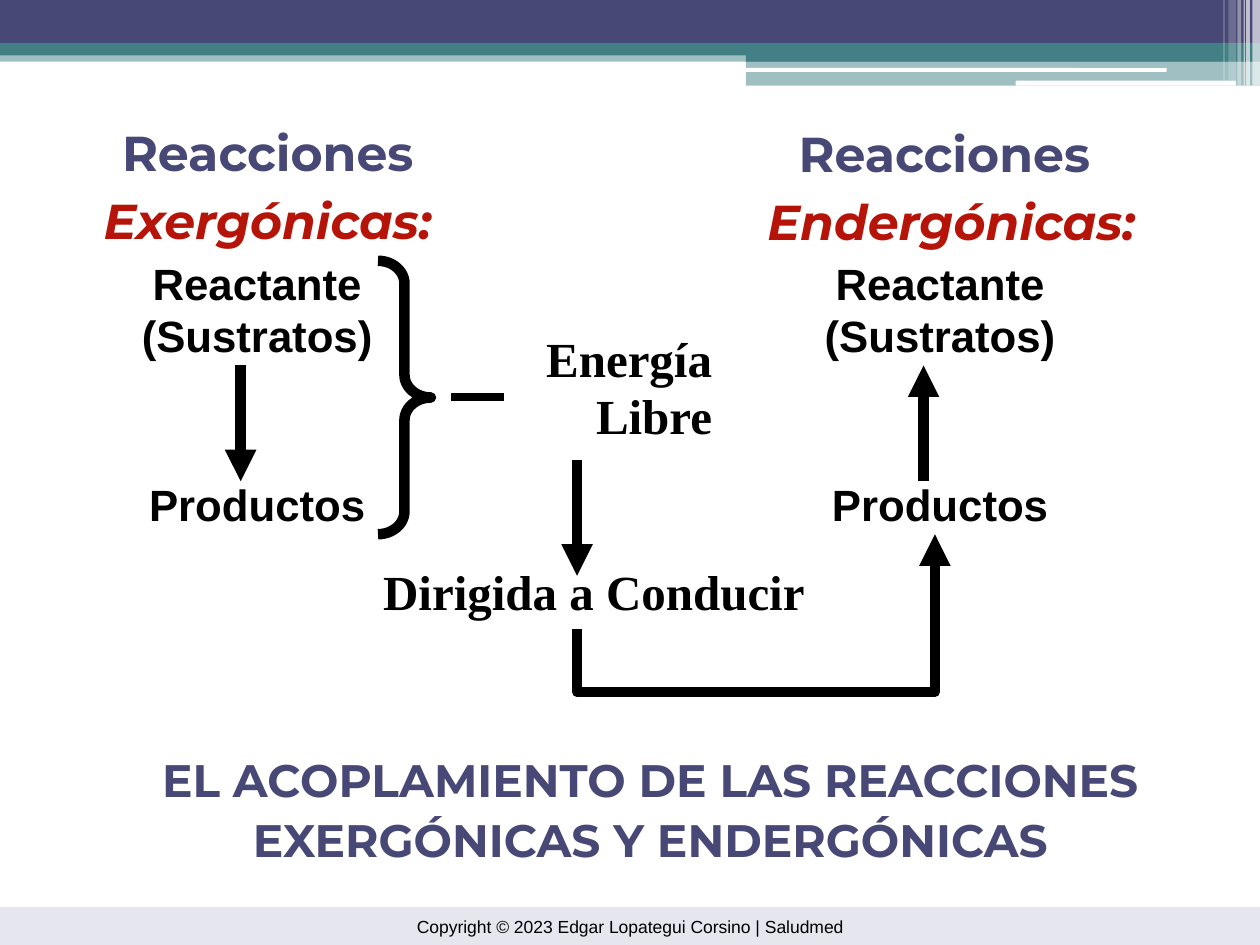
"""Builds the slide on coupling exergonic and endergonic reactions."""
from pptx import Presentation
from pptx.dml.color import RGBColor
from pptx.enum.shapes import MSO_CONNECTOR, MSO_SHAPE as SHAPE
from pptx.enum.text import MSO_ANCHOR as ANCHOR, MSO_AUTO_SIZE, PP_ALIGN as ALIGN
from pptx.oxml.ns import qn
from pptx.util import Inches, Pt
from lxml import etree

COLORS = {"navy": "484876", "teal": "438086", "white": "FFFFFF",
          "pale": "E6E6EF", "black": "000000", "red": "B61408"}
HEADING = {"name": "Montserrat", "size": Pt(28), "bold": True, "color": "navy"}
EMPHASIS = {**HEADING, "color": "red", "italic": True}
TITLE = {**HEADING, "size": Pt(26)}
LABEL = {"name": "Arial", "size": Pt(25), "bold": True, "color": "black"}
ENERGY = {"name": "Times New Roman", "size": Pt(28), "bold": True, "color": "black"}
FOOTER = {"name": "Arial", "size": Pt(10), "bold": False, "color": "black"}


class Deck:
    def __init__(self):
        self.prs = Presentation()
        self.prs.slide_width, self.prs.slide_height = Inches(10), Inches(7.5)
        self.slide = self.prs.slides.add_slide(self.prs.slide_layouts[5])
        self.shapes = self.slide.shapes

    def rgb(self, name):
        return RGBColor.from_string(COLORS[name])

    def fill_text(self, tf, lines, align=ALIGN.CENTER, spacing=1.0, before=5.6, hang=0.38):
        tf.word_wrap = True
        tf.auto_size = MSO_AUTO_SIZE.NONE
        for i, (text, style) in enumerate(lines):
            p = tf.add_paragraph() if i else tf.paragraphs[0]
            p.alignment, p.line_spacing = align, spacing
            p.space_before = Pt(before if i else 0)
            pPr = p._p.get_or_add_pPr()
            pPr.set("marL", str(Inches(hang)))
            pPr.set("indent", str(-Inches(hang)))
            r = p.add_run()
            r.text = text
            for key, value in style.items():
                if key == "color":
                    r.font.color.rgb = self.rgb(value)
                else:
                    setattr(r.font, key, value)

    def text(self, x, y, w, h, lines, **kw):
        box = self.shapes.add_textbox(*map(Inches, (x, y, w, h)))
        self.fill_text(box.text_frame, lines, **kw)

    def title(self, x, y, w, h, lines, **kw):
        sp = self.shapes.title
        sp.left, sp.top, sp.width, sp.height = map(Inches, (x, y, w, h))
        sp.text_frame.vertical_anchor = ANCHOR.MIDDLE
        self.fill_text(sp.text_frame, lines, **kw)

    def band(self, x, y, w, h, color, alpha=100, kind=SHAPE.RECTANGLE):
        sp = self.shapes.add_shape(kind, *map(Inches, (x, y, w, h)))
        sp.shadow.inherit = False
        sp.fill.solid()
        sp.fill.fore_color.rgb = self.rgb(color)
        sp.line.fill.background()
        if alpha < 100:
            clr = sp._element.spPr.find(".//" + qn("a:srgbClr"))
            etree.SubElement(clr, qn("a:alpha")).set("val", str(alpha * 1000))
        return sp

    def stroke(self, sp, width=6, arrow=False):
        sp.line.color.rgb = self.rgb("black")
        sp.line.width = Pt(width)
        ln = sp._element.spPr.find(qn("a:ln"))
        etree.SubElement(ln, qn("a:round"))
        if arrow:
            etree.SubElement(ln, qn("a:tailEnd")).set("type", "triangle")

    def line(self, x1, y1, x2, y2, **kw):
        sp = self.shapes.add_connector(MSO_CONNECTOR.STRAIGHT, *map(Inches, (x1, y1, x2, y2)))
        self.stroke(sp, **kw)
        etree.SubElement(sp._element.spPr, qn("a:effectLst"))

    def brace(self, x, y, w, h, curl):
        sp = self.shapes.add_shape(SHAPE.RIGHT_BRACE, *map(Inches, (x, y, w, h)))
        sp.shadow.inherit = False
        sp.adjustments[0] = curl
        sp.fill.background()
        self.stroke(sp)

    def route(self, points):
        start, *rest = [tuple(map(Inches, point)) for point in points]
        builder = self.shapes.build_freeform(*start)
        builder.add_line_segments(rest, close=False)
        sp = builder.convert_to_shape()
        sp.shadow.inherit = False
        sp.fill.background()
        self.stroke(sp, arrow=True)


def main():
    deck = Deck()
    for y, h, color, alpha in ((0.4, 0.09, "teal", 50), (0, 0.34, "navy", 100),
                               (0.34, 0.1, "teal", 100)):
        deck.band(0, y, 10, h, color, alpha)
    deck.band(5.92, 0.39, 4.08, 0.1, "teal")
    deck.band(5.92, 0.48, 4.08, 0.2, "teal", 50)
    for x, y, w, h in ((5.91, 0.54, 3.35, 0.03), (8.06, 0.64, 1.75, 0.04)):
        deck.band(x, y, w, h, "white", kind=SHAPE.ROUNDED_RECTANGLE)
    for x, w, h, alpha in ((9.94, 0.06, 0.68, 65), (9.89, 0.03, 0.68, 65),
                           (9.87, 0.01, 0.68, 60), (9.82, 0.03, 0.68, 40),
                           (9.75, 0.06, 0.64, 20), (9.71, 0.01, 0.64, 30)):
        deck.band(x, 0, w, h, "white", alpha)
    footer = deck.band(0, 7.2, 10, 0.3, "pale")
    footer.text_frame.vertical_anchor = ANCHOR.MIDDLE
    deck.fill_text(footer.text_frame,
                   [("Copyright © 2023 Edgar Lopategui Corsino | Saludmed", FOOTER)], hang=0)

    deck.text(0.25, 0.92, 3.75, 1.14, [("Reacciones", HEADING), ("Exergónicas:", EMPHASIS)])
    deck.text(5.7, 0.93, 3.59, 1.16, [("Reacciones", HEADING), (" Endergónicas:", EMPHASIS)])
    for x, start, end in ((0.58, 2.9, 3.82), (6, 3.82, 2.9)):
        deck.text(x, 2.07, 2.92, 0.83, [("Reactante", LABEL), ("(Sustratos)", LABEL)],
                  spacing=0.8)
        deck.text(x, 3.82, 2.92, 0.83, [("Productos", LABEL)], spacing=0.8)
        deck.line(x + 1.33, start, x + 1.33, end, arrow=True)

    deck.brace(3, 2.07, 0.42, 2.17, 0.43)
    deck.line(3.58, 3.15, 4, 3.15, width=4.5)
    deck.text(3.92, 2.65, 1.83, 0.75, [(" Energía", ENERGY), (" Libre", ENERGY)],
              align=ALIGN.RIGHT, spacing=0.8)
    deck.line(4.58, 3.65, 4.58, 4.57, arrow=True)
    deck.text(1.83, 4.57, 5.67, 0.33, [(" Dirigida a Conducir", ENERGY)], spacing=0.6)
    deck.route([(4.58, 4.99), (4.58, 5.49), (7.42, 5.49), (7.42, 4.24)])
    deck.title(0.5, 5.99, 9.33, 0.83,
               [("EL ACOPLAMIENTO DE LAS REACCIONES", TITLE),
                ("EXERGÓNICAS Y ENDERGÓNICAS", TITLE)], spacing=1.1, before=0, hang=0)
    deck.prs.save("out.pptx")


if __name__ == "__main__":
    main()
